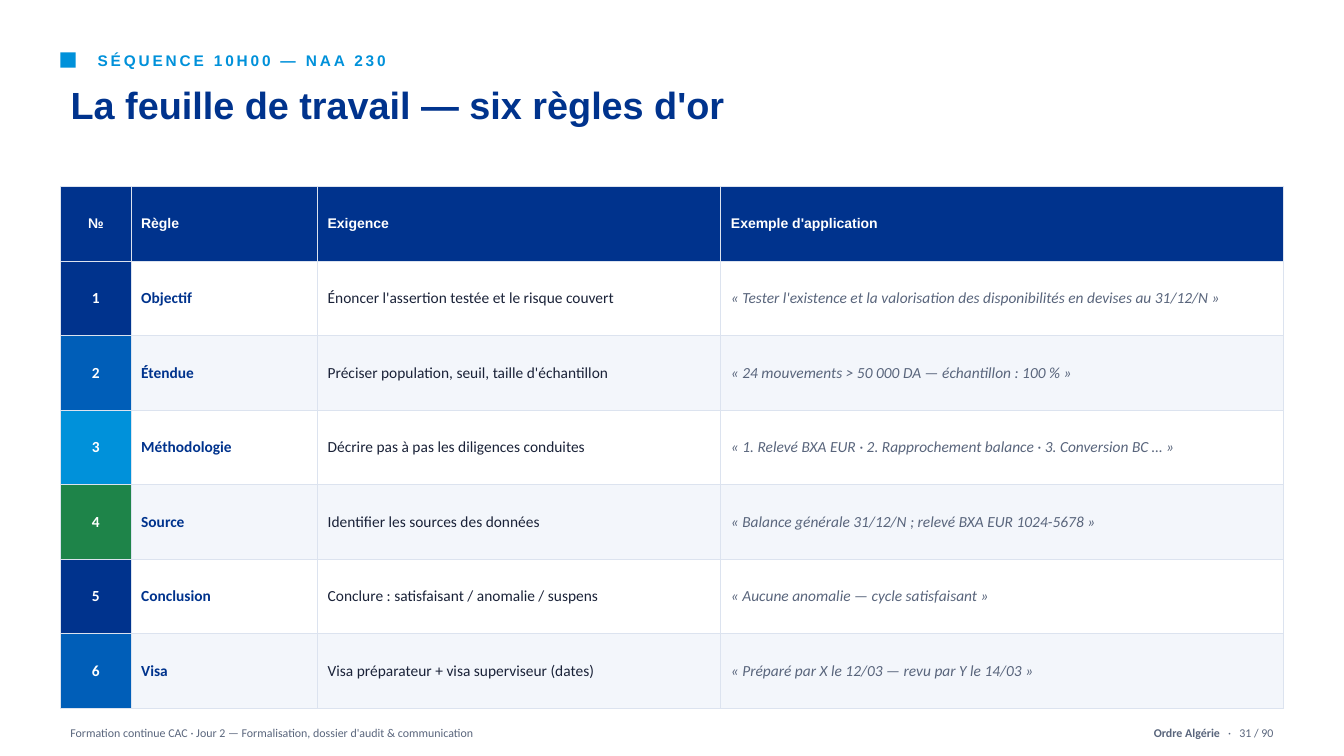
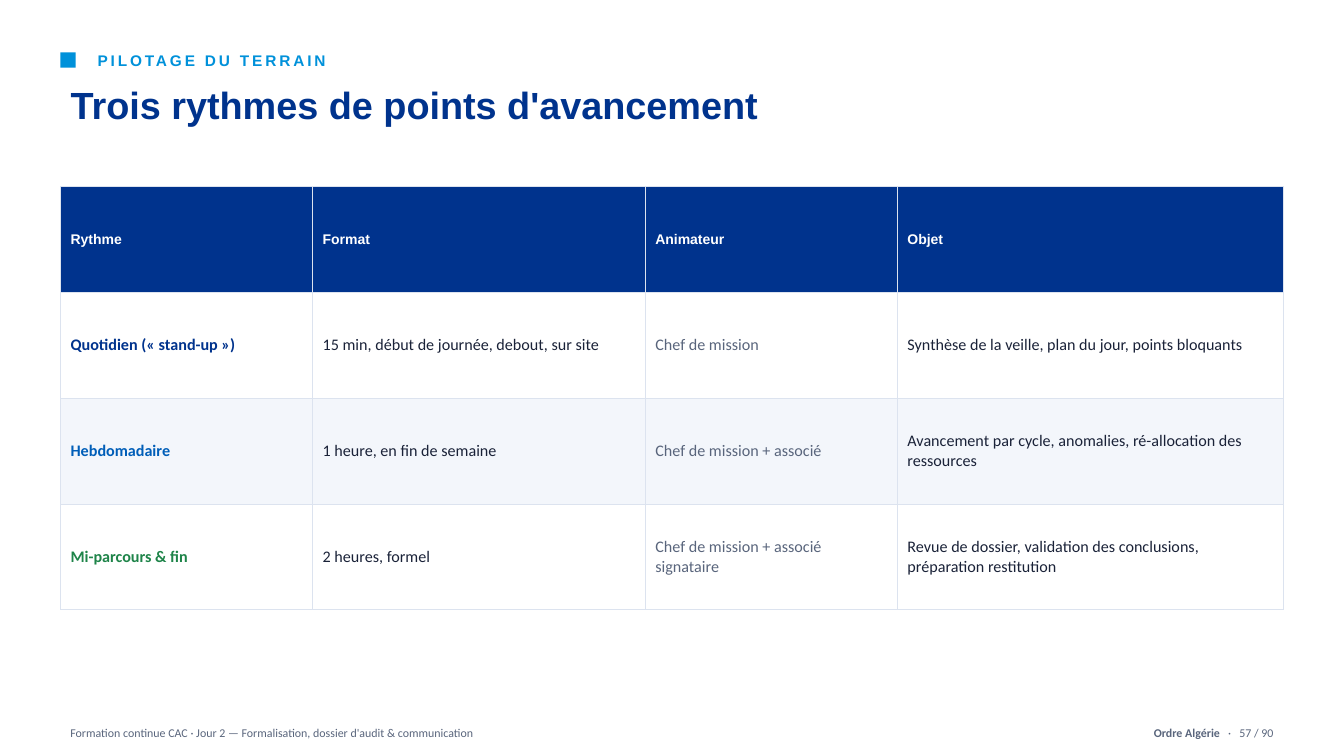
import pptx
import pptx.util
import pptx.dml.color
import pptx.enum.shapes
import pptx.enum.text
import lxml.etree

PX = 9144
HUES = {
    "navy": "00338D", "blue": "005EB8", "sky": "0091DA", "green": "1E8449",
    "ink": "1A2238", "grey": "59657C", "rule": "DCE3EF", "pale": "F3F6FB", "white": "FFFFFF",
}
ALIGN = pptx.enum.text.PP_ALIGN
ANCHOR = pptx.enum.text.MSO_ANCHOR


def paint(fill, hue):
    fill.solid()
    fill.fore_color.rgb = pptx.dml.color.RGBColor.from_string(HUES[hue])


def write(frame, words, size=11, face="Calibri", hue="grey", bold=False, slant=False,
          align=ALIGN.LEFT, anchor=ANCHOR.MIDDLE, gap=0):
    frame.word_wrap = True
    frame.vertical_anchor = anchor
    para = frame.paragraphs[0]
    para.alignment = align
    run = para.add_run()
    run.text = words
    run.font.size = pptx.util.Pt(size)
    run.font.name = face
    run.font.bold = bold
    run.font.italic = slant
    paint(run.font.fill, hue)
    if gap:
        run.font._element.set("spc", str(round(gap * 100)))
    return para


HEAD = {"size": 10, "face": "Arial", "hue": "white", "bold": True}
LOOKS = {
    "num": {"hue": "white", "bold": True, "align": ALIGN.CENTER},
    "name": {"hue": "navy", "bold": True},
    "mark": {"bold": True},
    "body": {"hue": "ink"},
    "quote": {"slant": True},
    "who": {"hue": "grey"},
}

PAGES = [
    {
        "tag": "SÉQUENCE 10H00 — NAA 230",
        "title": "La feuille de travail — six règles d'or",
        "page": "31 / 90",
        "cols": [70, 185, 400, 558],
        "high": 74,
        "size": 11,
        "looks": ["num", "name", "body", "quote"],
        "tints": ["navy", "blue", "sky", "green", "navy", "blue"],
        "rows": [
            ["№", "Règle", "Exigence", "Exemple d'application"],
            ["1", "Objectif", "Énoncer l'assertion testée et le risque couvert",
             "« Tester l'existence et la valorisation des disponibilités en devises au 31/12/N »"],
            ["2", "Étendue", "Préciser population, seuil, taille d'échantillon",
             "« 24 mouvements > 50 000 DA — échantillon : 100 % »"],
            ["3", "Méthodologie", "Décrire pas à pas les diligences conduites",
             "« 1. Relevé BXA EUR · 2. Rapprochement balance · 3. Conversion BC … »"],
            ["4", "Source", "Identifier les sources des données",
             "« Balance générale 31/12/N ; relevé BXA EUR 1024-5678 »"],
            ["5", "Conclusion", "Conclure : satisfaisant / anomalie / suspens",
             "« Aucune anomalie — cycle satisfaisant »"],
            ["6", "Visa", "Visa préparateur + visa superviseur (dates)",
             "« Préparé par X le 12/03 — revu par Y le 14/03 »"],
        ],
    },
    {
        "tag": "PILOTAGE DU TERRAIN",
        "title": "Trois rythmes de points d'avancement",
        "page": "57 / 90",
        "cols": [250, 330, 250, 383],
        "high": 105,
        "size": 11.5,
        "looks": ["mark", "body", "who", "body"],
        "tints": ["navy", "blue", "green"],
        "rows": [
            ["Rythme", "Format", "Animateur", "Objet"],
            ["Quotidien (« stand-up »)", "15 min, début de journée, debout, sur site",
             "Chef de mission", "Synthèse de la veille, plan du jour, points bloquants"],
            ["Hebdomadaire", "1 heure, en fin de semaine", "Chef de mission + associé",
             "Avancement par cycle, anomalies, ré-allocation des ressources"],
            ["Mi-parcours & fin", "2 heures, formel", "Chef de mission + associé signataire",
             "Revue de dossier, validation des conclusions, préparation restitution"],
        ],
    },
]

deck = pptx.Presentation()
deck.slide_width = 1333 * PX
deck.slide_height = 750 * PX

for page in PAGES:
    slide = deck.slides.add_slide(deck.slide_layouts[5])
    shapes = slide.shapes

    title = shapes.title
    title.left, title.top, title.width, title.height = 60 * PX, 78 * PX, 1213 * PX, 95 * PX
    title.text_frame.auto_size = pptx.enum.text.MSO_AUTO_SIZE.NONE
    para = write(title.text_frame, page["title"], size=27, face="Arial", hue="navy",
                 bold=True, anchor=ANCHOR.TOP)
    para.line_spacing = 0.98

    square = shapes.add_shape(pptx.enum.shapes.MSO_SHAPE.RECTANGLE,
                              60 * PX, 52 * PX, 15 * PX, 15 * PX)
    square.shadow.inherit = False
    paint(square.fill, "sky")
    square.line.fill.background()

    tag = shapes.add_textbox(87 * PX, 46 * PX, 1186 * PX, 28 * PX)
    write(tag.text_frame, page["tag"], face="Arial", hue="sky", bold=True, gap=2)

    rows, cols, high = page["rows"], page["cols"], page["high"]
    grid = shapes.add_table(len(rows), len(cols), 60 * PX, 185 * PX,
                            sum(cols) * PX, len(rows) * high * PX).table
    grid.first_row = True
    grid.horz_banding = False
    for col, wide in zip(grid.columns, cols):
        col.width = wide * PX
    for r, row in enumerate(rows):
        grid.rows[r].height = high * PX
        for c, words in enumerate(row):
            cell = grid.cell(r, c)
            look = page["looks"][c]
            style = {**LOOKS[look], "size": page["size"]}
            back = "white" if r % 2 else "pale"
            if r == 0:
                style = {**style, **HEAD, "slant": False}
                back = "navy"
            elif look == "num":
                back = page["tints"][r - 1]
            elif look == "mark":
                style["hue"] = page["tints"][r - 1]
            write(cell.text_frame, words, **style)
            cell.vertical_anchor = ANCHOR.MIDDLE
            props = cell._tc.get_or_add_tcPr()
            for side in ("lnL", "lnR", "lnT", "lnB"):
                edge = lxml.etree.SubElement(props, pptx.oxml.ns.qn("a:" + side), w="9525")
                solid = lxml.etree.SubElement(edge, pptx.oxml.ns.qn("a:solidFill"))
                lxml.etree.SubElement(solid, pptx.oxml.ns.qn("a:srgbClr"), val=HUES["rule"])
            paint(cell.fill, back)

    note = shapes.add_textbox(60 * PX, 712 * PX, 950 * PX, 30 * PX)
    write(note.text_frame,
          "Formation continue CAC · Jour 2 — Formalisation, dossier d'audit & communication",
          size=8.5)

    folio = shapes.add_textbox(963 * PX, 712 * PX, 310 * PX, 30 * PX)
    for words, bold, gap in (("Ordre Algérie", True, 0), (" ", False, 3.9), ("·", False, 0),
                             (" ", False, 3.9), (page["page"], False, 0)):
        write(folio.text_frame, words, size=8.5, bold=bold, gap=gap, align=ALIGN.RIGHT)

deck.save("out.pptx")
